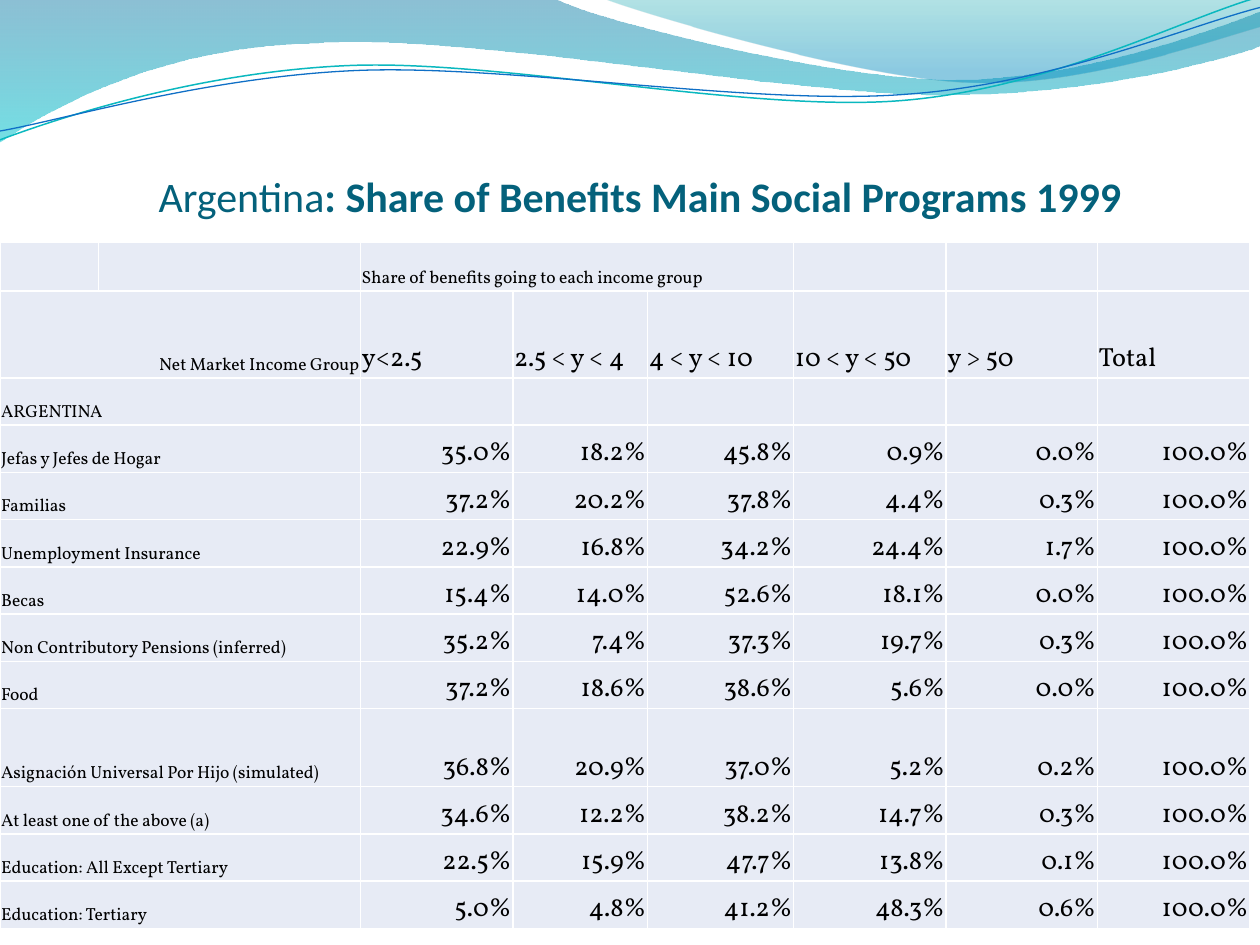
"""Build the slide on shares of social benefits by income group in Argentina."""
import math

import lxml.etree
import pptx
import pptx.dml.color
import pptx.enum.text
import pptx.oxml.ns
import pptx.util

Inches = pptx.util.Inches
Pt = pptx.util.Pt
qn = pptx.oxml.ns.qn
ALIGN = pptx.enum.text.PP_ALIGN
BOTTOM = pptx.enum.text.MSO_ANCHOR.BOTTOM


def color(value):
    return pptx.dml.color.RGBColor.from_string(value)


def turn(point, center, degrees):
    angle = math.radians(degrees)
    x, y = point[0] - center[0], point[1] - center[1]
    return (center[0] + x * math.cos(angle) - y * math.sin(angle),
            center[1] + x * math.sin(angle) + y * math.cos(angle))


presentation = pptx.Presentation()
presentation.slide_width = Inches(10)
presentation.slide_height = Inches(7.5)
slide = presentation.slides.add_slide(presentation.slide_layouts[6])

main_wave = [
    ((0, 0), []),
    ((4.4, -0.01), [(4.76, 0.17), (6.64, 0.63), (7.58, 0.63),
                    (8.53, 0.63), (9.58, 0.26), (10, 0.09)]),
    ((10.01, 0.36), [(9.83, 0.44), (8.7, 0.76), (7.46, 0.75),
                     (6.22, 0.75), (3.82, 0.28), (2.57, 0.34),
                     (1.29, 0.36), (0.46, 0.83), (-0.01, 1.13)]),
    ((0, 0), []),
]
corner_wave = [
    ((4.79, -0.01), [(5.09, 0.11), (6.82, 0.62), (7.69, 0.65),
                     (8.56, 0.69), (9.61, 0.32), (10, 0.21)]),
    ((10, 0), []),
    ((4.79, -0.01), []),
]
teal_line = [
    ((0, 1.11), [(0.48, 0.93), (1.58, 0.57), (2.77, 0.52),
                 (3.95, 0.47), (5.93, 0.89), (7.13, 0.8),
                 (8.33, 0.71), (9.38, 0.15), (9.98, -0.02)]),
]
blue_line = [
    ((0, 1.04), [(0.47, 0.96), (1.64, 0.61), (2.83, 0.56),
                 (4.03, 0.51), (5.97, 0.84), (7.17, 0.75),
                 (8.36, 0.67), (9.41, 0.21), (10, 0.06)]),
]
tilt = 2.7
waves = [
    (main_wave, [(0, "0074A1", 45), (1, "00C6CF", 55)], None, None),
    (corner_wave, [(0, "00A1A9", 30), (0.8, "008BBF", 45)], None, None),
    (teal_line, None, ("0AB8BF", 0.85), (4.99, 0.58)),
    (blue_line, None, ("0F6FC6", 0.75), (5, 0.59)),
]
for sections, stops, line, center in waves:
    points = [point for start, controls in sections for point in (start, *controls)]
    if center:
        points = [turn(point, center, tilt) for point in points]
    points = [(Inches(x), Inches(y)) for x, y in points]
    builder = slide.shapes.build_freeform(*points[0])
    builder.add_line_segments(points[1:], close=stops is not None)
    shape = builder.convert_to_shape()
    shape.shadow.inherit = False
    segments = [None, *shape._element.iter(qn("a:lnTo"))]
    position = 0
    for _, controls in sections:
        position += 1
        for first in range(position, position + len(controls), 3):
            curve = lxml.etree.Element(qn("a:cubicBezTo"))
            segments[first].addprevious(curve)
            for segment in segments[first:first + 3]:
                curve.append(segment[0])
                segment.getparent().remove(segment)
        position += len(controls)
    if stops:
        shape.line.fill.background()
        shape.fill.gradient()
        shape.fill.gradient_angle = 270
        for stop, (offset, value, _) in zip(shape.fill.gradient_stops, stops):
            stop.position = offset
            stop.color.rgb = color(value)
        for element, (_, _, opacity) in zip(shape._element.iter(qn("a:srgbClr")), stops):
            lxml.etree.SubElement(element, qn("a:alpha"), val=str(opacity * 1000))
    else:
        shape.rotation = 360 - tilt
        shape.fill.background()
        shape.line.color.rgb = color(line[0])
        shape.line.width = Pt(line[1])

title = slide.shapes.add_textbox(Inches(0.58), Inches(0.5), Inches(9), Inches(1.25))
title_format = {"word_wrap": True, "vertical_anchor": BOTTOM, "margin_left": 0,
                "margin_right": 0, "margin_top": Inches(0.05), "margin_bottom": 0}
for name, value in title_format.items():
    setattr(title.text_frame, name, value)
paragraph = title.text_frame.paragraphs[0]
paragraph.alignment = ALIGN.CENTER
for text, bold in [("Argentina", False),
                   (": Share of Benefits Main Social Programs 1999", True)]:
    run = paragraph.add_run()
    run.text = text
    for name, value in {"name": "Calibri", "size": Pt(24), "bold": bold}.items():
        setattr(run.font, name, value)
    run.font.color.rgb = color("04617B")

programs = [
    ("Jefas y Jefes de Hogar", 35.0, 18.2, 45.8, 0.9, 0.0),
    ("Familias", 37.2, 20.2, 37.8, 4.4, 0.3),
    ("Unemployment Insurance", 22.9, 16.8, 34.2, 24.4, 1.7),
    ("Becas", 15.4, 14.0, 52.6, 18.1, 0.0),
    ("Non Contributory Pensions (inferred)", 35.2, 7.4, 37.3, 19.7, 0.3),
    ("Food", 37.2, 18.6, 38.6, 5.6, 0.0),
    ("Asignación Universal Por Hijo (simulated)", 36.8, 20.9, 37.0, 5.2, 0.2),
    ("At least one of the above (a)", 34.6, 12.2, 38.2, 14.7, 0.3),
    ("Education: All Except Tertiary", 22.5, 15.9, 47.7, 13.8, 0.1),
    ("Education: Tertiary", 5.0, 4.8, 41.2, 48.3, 0.6),
]
rows = [
    ["", "", "Share of benefits going to each income group"] + [""] * 5,
    [" Net Market Income Group", "", "y<2.5", "2.5 < y < 4", "4 < y < 10",
     "10 < y < 50", "y > 50", "Total"],
    ["ARGENTINA"] + [""] * 7,
]
for program, *shares in programs:
    rows.append([program, ""] + [f"{share:.1f}%" for share in shares + [100]])

column_widths = [0.78, 2.08, 1.21, 1.07, 1.16, 1.21, 1.2, 1.21]
tall_rows = {0: 0.39, 1: 0.69, 9: 0.62}
table_height = 5.45
row_height = (table_height - sum(tall_rows.values())) / (len(rows) - len(tall_rows))
table = slide.shapes.add_table(
    len(rows), len(column_widths), 0, Inches(1.92),
    Inches(sum(column_widths)), Inches(table_height)).table
table.first_row = False
table.horz_banding = False
for column, width in zip(table.columns, column_widths):
    column.width = Inches(width)

cell_format = {"vertical_anchor": BOTTOM, "margin_left": Inches(0.01),
               "margin_right": Inches(0.01), "margin_top": Inches(0.01),
               "margin_bottom": 0}
for row_index, texts in enumerate(rows):
    table.rows[row_index].height = Inches(tall_rows.get(row_index, row_height))
    for column_index, text in enumerate(texts):
        cell = table.cell(row_index, column_index)
        for name, value in cell_format.items():
            setattr(cell, name, value)
        for side in ("lnL", "lnR", "lnT", "lnB"):
            border = lxml.etree.SubElement(
                cell._tc.get_or_add_tcPr(), qn(f"a:{side}"), w=str(Pt(1)))
            fill = lxml.etree.SubElement(border, qn("a:solidFill"))
            lxml.etree.SubElement(fill, qn("a:srgbClr"), val="FFFFFF")
        cell.fill.solid()
        cell.fill.fore_color.rgb = color("E7EBF5")
        if not text:
            continue
        is_value = row_index > 0 and column_index > 1
        is_right = (row_index > 2 and is_value) or (row_index, column_index) == (1, 0)
        paragraph = cell.text_frame.paragraphs[0]
        paragraph.alignment = ALIGN.RIGHT if is_right else ALIGN.LEFT
        run = paragraph.add_run()
        run.text = text
        for name, value in {"name": "Vollkorn", "size": Pt(15 if is_value else 10)}.items():
            setattr(run.font, name, value)
        run.font.color.rgb = color("000000")

table.cell(0, 2).merge(table.cell(0, 4))
for row_index in range(1, len(rows)):
    table.cell(row_index, 0).merge(table.cell(row_index, 1))

presentation.save("out.pptx")
